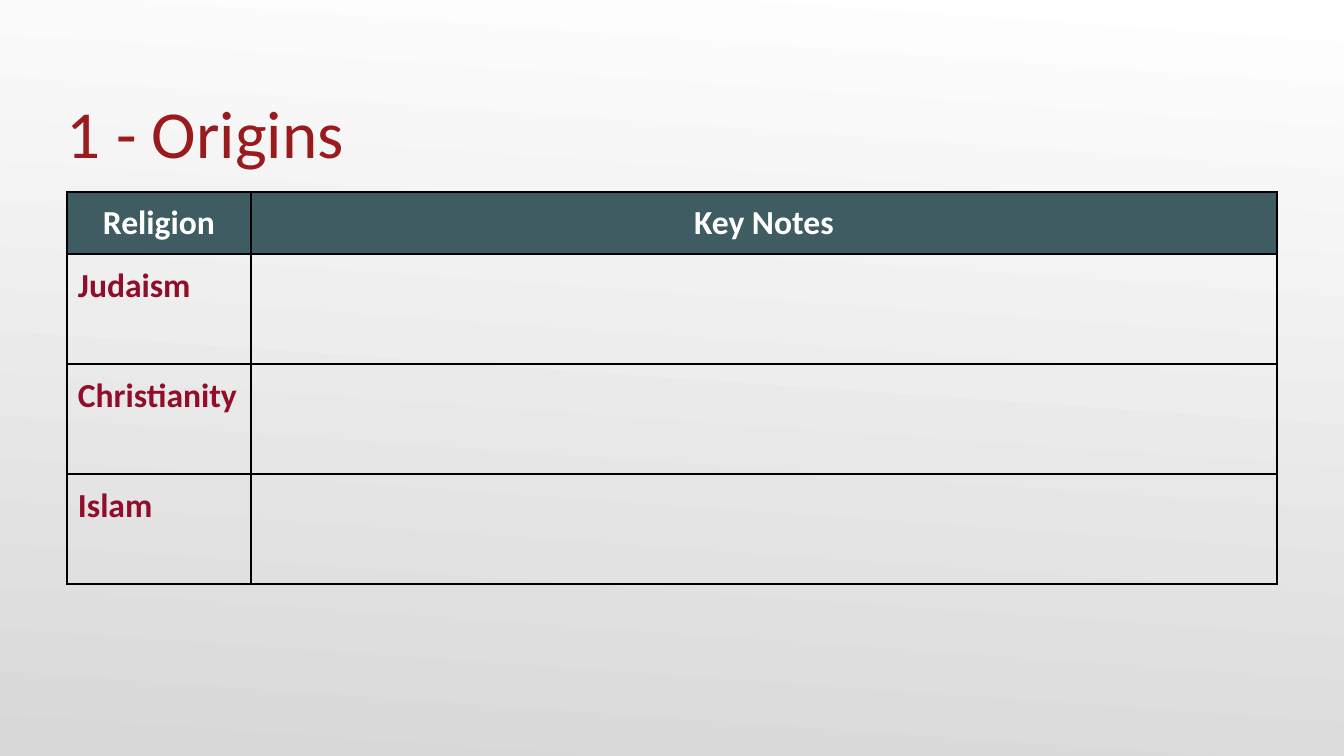
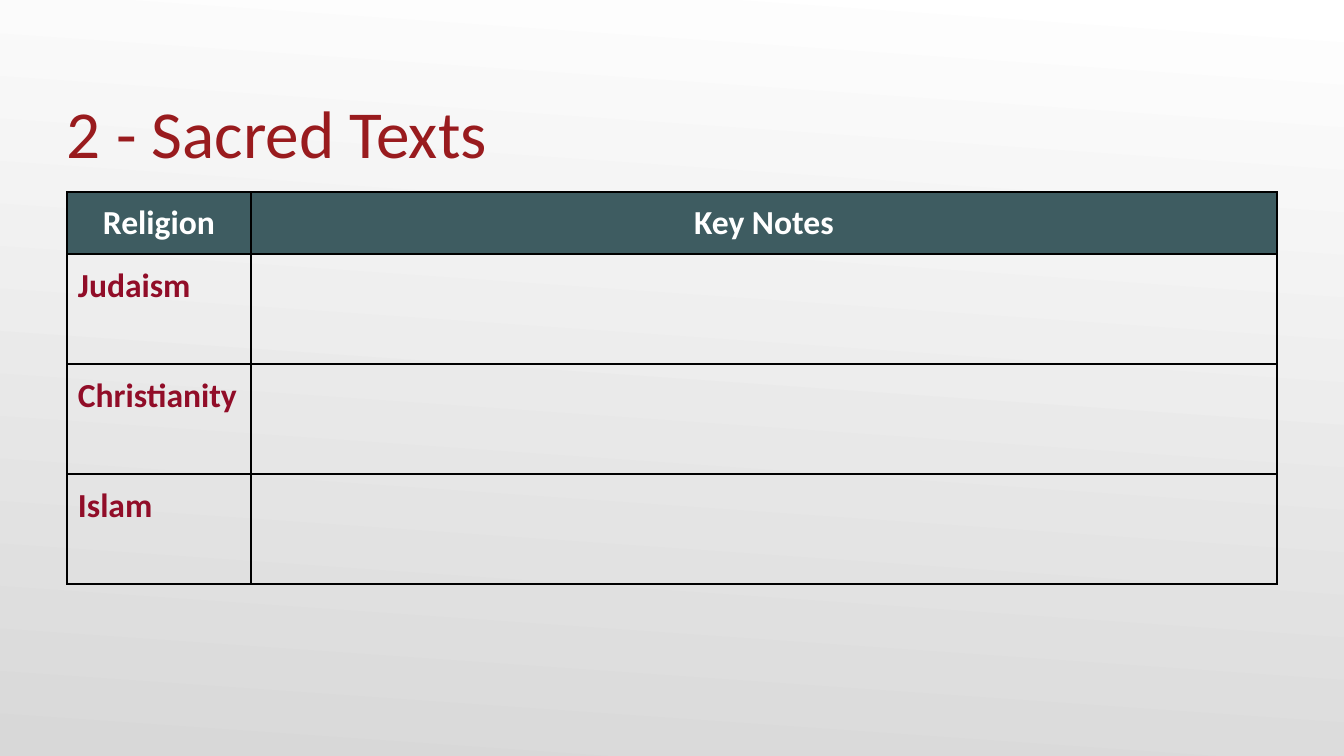
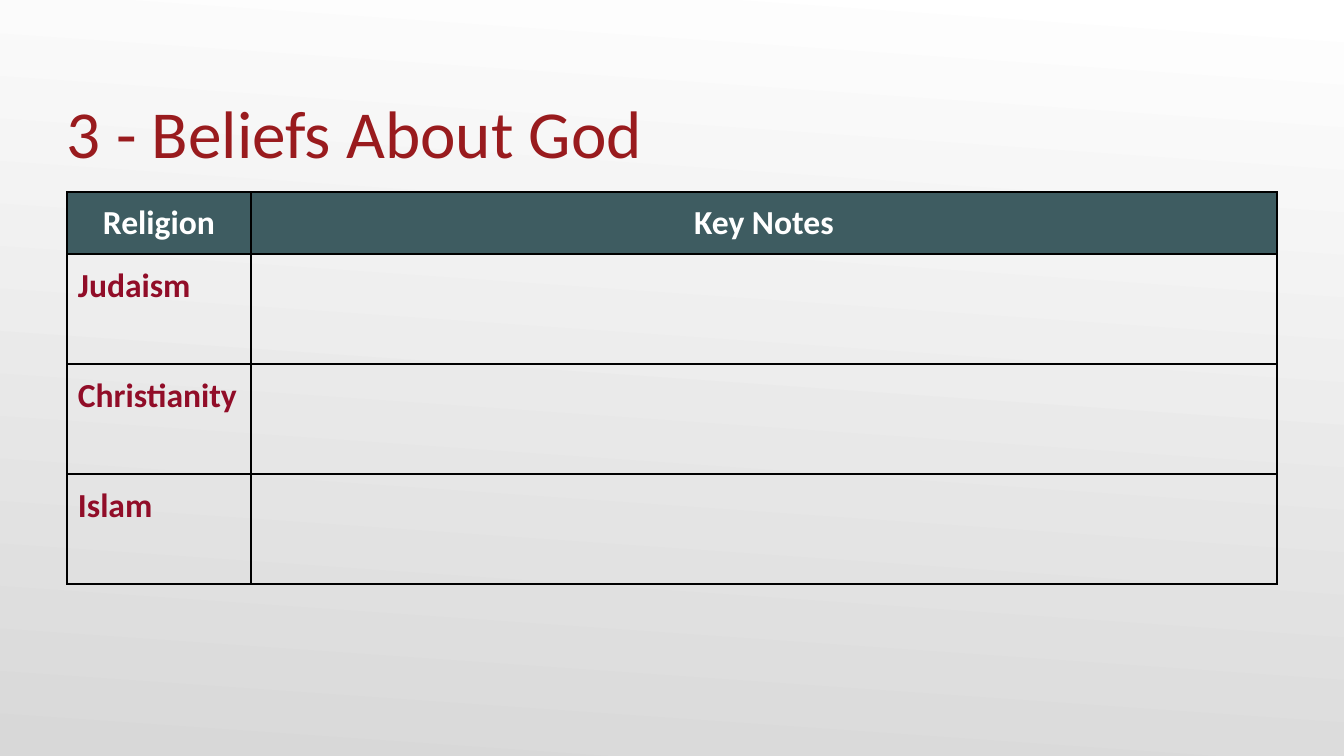
from lxml.etree import SubElement as Sub
from pptx import Presentation
from pptx.dml.color import RGBColor as Rgb
from pptx.enum.text import MSO_ANCHOR as Anchor, PP_ALIGN as Align
from pptx.oxml.ns import qn
from pptx.util import Emu, Pt

FONT = "Calibri"
TITLE, HEAD, NAME = "991B1E", "3E5C61", "910D28"
WHITE, GREY, BLACK = "FFFFFF", "D8D8D8", "000000"
HEADS = ["Religion", "Key Notes"]
FAITHS = ["Judaism", "Christianity", "Islam"]
TOPICS = ["Origins", "Sacred Texts", "Beliefs About God"]


def px(n):
    return Emu(round(n * 914400 / 134.4))


def color(code):
    return Rgb.from_string(code)


def add_run(para, text, size, code, bold=False):
    run = para.add_run()
    run.text = text
    font = run.font
    font.name, font.size, font.bold = FONT, Pt(size), bold
    font.color.rgb = color(code)


def set_pads(item, left, top, right, bottom):
    item.margin_left, item.margin_top = px(left), px(top)
    item.margin_right, item.margin_bottom = px(right), px(bottom)


def add_edges(cell, code, width):
    props = cell._tc.get_or_add_tcPr()
    for side in ("lnL", "lnR", "lnT", "lnB"):
        line = Sub(props, qn("a:" + side), w=str(Pt(width)))
        fill = Sub(line, qn("a:solidFill"))
        Sub(fill, qn("a:srgbClr"), val=code)


def paint_back(slide):
    fill = slide.background.fill
    fill.gradient()
    fill.gradient_angle = 266
    for stop, code in zip(fill.gradient_stops, (WHITE, GREY)):
        stop.color.rgb = color(code)


def add_title(slide, box, text):
    frame = slide.shapes.add_textbox(*map(px, box)).text_frame
    frame.word_wrap = True
    frame.vertical_anchor = Anchor.BOTTOM
    set_pads(frame, 0, 7, 0, 0)
    add_run(frame.paragraphs[0], text, 36, TITLE)


def add_notes(slide, box, first=184, top=62):
    left, y, width, height = box
    count = len(FAITHS) + 1
    table = slide.shapes.add_table(count, 2, *map(px, box)).table
    table.horz_banding = table.first_row = False

    # Narrow name column, equal rows below the header
    for col, size in zip(table.columns, (first, width - first)):
        col.width = px(size)
    for i, row in enumerate(table.rows):
        row.height = px((height - top) / len(FAITHS) if i else top)

    for cell in table.iter_cells():
        set_pads(cell, 11, 11, 11, 11)
        add_edges(cell, BLACK, 1)
        cell.fill.background()

    # Header row
    for col, text in enumerate(HEADS):
        cell = table.cell(0, col)
        cell.fill.solid()
        cell.fill.fore_color.rgb = color(HEAD)
        para = cell.text_frame.paragraphs[0]
        para.alignment = Align.CENTER
        add_run(para, text, 18, WHITE, True)

    # Religion names
    for row, text in enumerate(FAITHS, 1):
        para = table.cell(row, 0).text_frame.paragraphs[0]
        add_run(para, text, 18, NAME, True)


def add_topic(deck, number, topic):
    slide = deck.slides.add_slide(deck.slide_layouts[6])
    paint_back(slide)
    add_title(slide, (67, 46, 1210, 126), f"{number} - {topic}")
    add_notes(slide, (67, 192, 1210, 392))


def main():
    deck = Presentation()
    deck.slide_width, deck.slide_height = px(1344), px(756)
    for number, topic in enumerate(TOPICS, 1):
        add_topic(deck, number, topic)
    deck.save("out.pptx")


if __name__ == "__main__":
    main()
